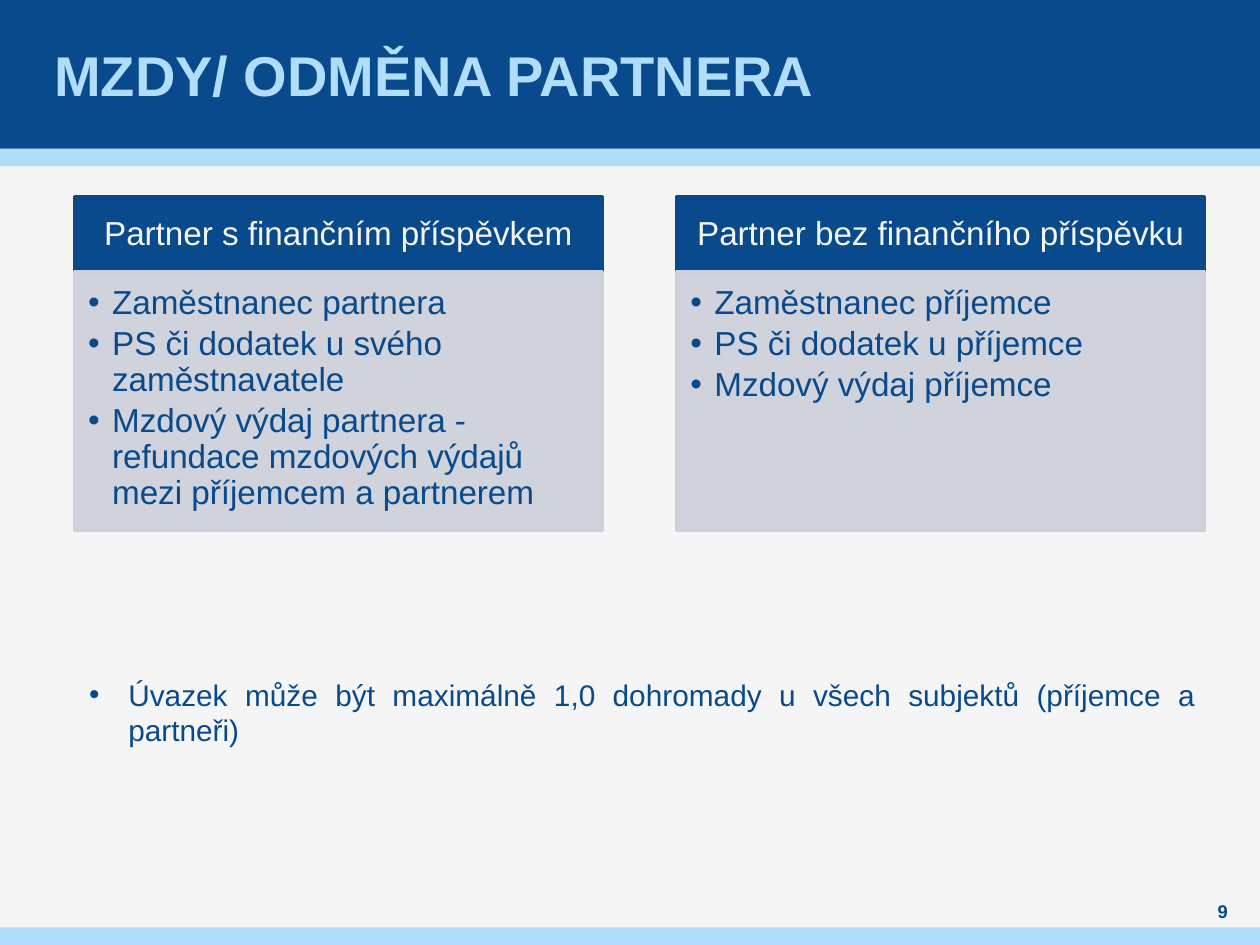
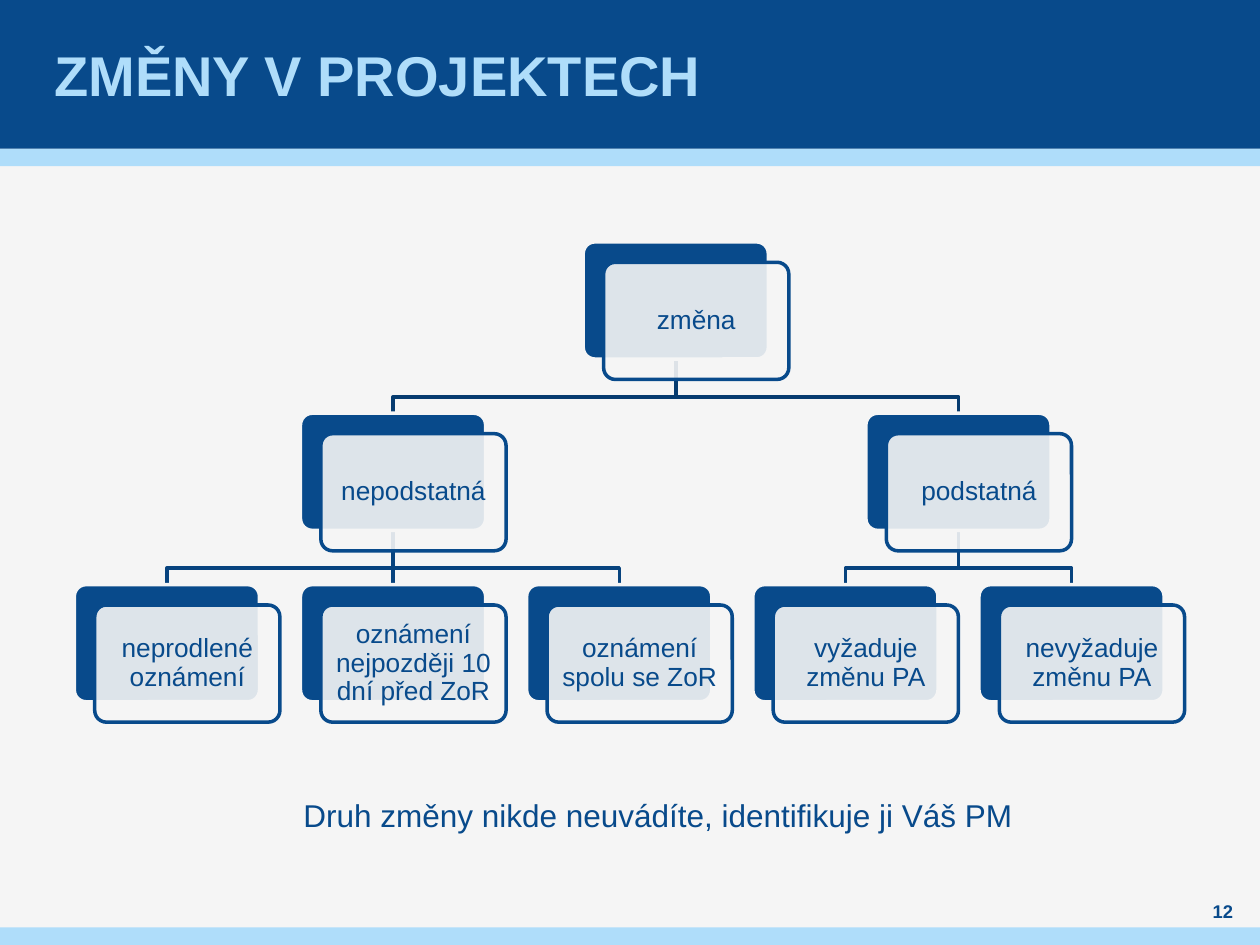
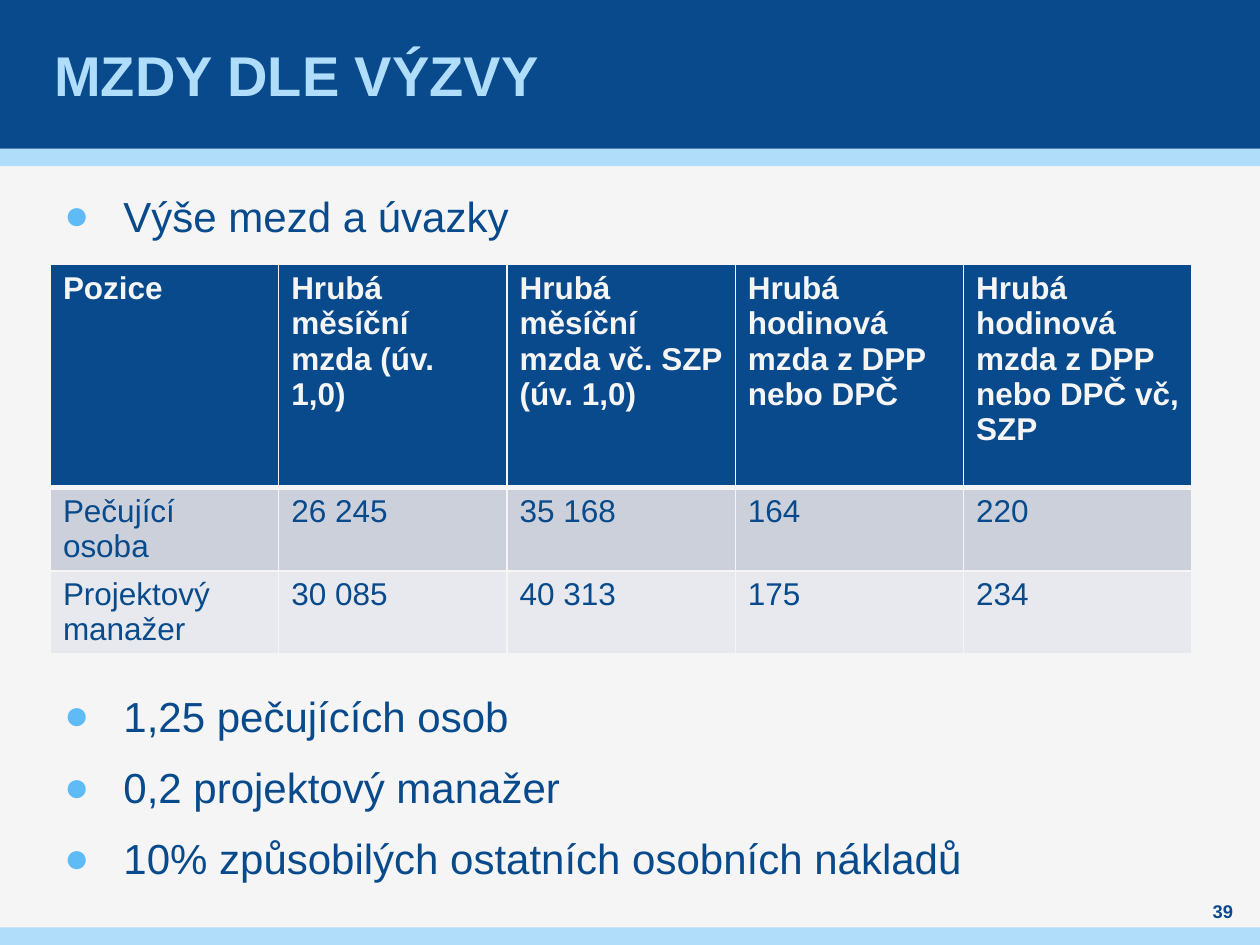
from dataclasses import dataclass
from typing import NamedTuple

from lxml.etree import SubElement
from pptx import Presentation
from pptx.dml.color import RGBColor
from pptx.enum.shapes import MSO_CONNECTOR, MSO_SHAPE
from pptx.enum.text import MSO_ANCHOR, MSO_AUTO_SIZE, PP_ALIGN
from pptx.oxml.ns import qn
from pptx.util import Inches, Pt

COLORS = {
    "navy": "084A8B",
    "sky": "AFDDFA",
    "bullet": "5FBBF5",
    "paper": "F5F5F5",
    "grey": "CCD0DA",
    "light": "E7E9EE",
    "branch": "07437E",
    "trunk": "063B6F",
}
FONT = "Arial"
COLS, ROWS = 100, 75
UNIT = Inches(0.1)


class Box(NamedTuple):
    """Left, top, width and height in grid units."""

    col: float
    row: float
    cols: float
    rows: float

    def emu(self) -> list[int]:
        """Return the box as lengths on the slide."""
        return [round(v * UNIT) for v in self]


@dataclass
class Style:
    """Look of a paragraph."""

    size: float
    color: str = "navy"
    bold: bool = False
    align: PP_ALIGN = PP_ALIGN.LEFT
    spacing: object = None
    before: float = 0
    after: float = 0
    bullet: str = ""
    indent: float = 0
    bullet_color: str = "navy"


@dataclass
class Panel:
    """Heading with a list below it."""

    heading: str
    items: list[str]


@dataclass
class Node:
    """Box of the tree, placed by column and level."""

    text: str
    col: float
    level: int
    parent: int | None = None


BANDS = [
    (Box(0, 11.8, COLS, 1.4), "sky"),
    (Box(0, 0, COLS, 11.8), "navy"),
    (Box(0, 73.6, COLS, 1.4), "sky"),
]
TITLE = Style(32, "sky", True)
NUMBER = Style(10.5, bold=True, align=PP_ALIGN.CENTER)
HEADING = Style(19, "paper", align=PP_ALIGN.CENTER, spacing=0.9)
ITEM = Style(19, spacing=0.9, after=2.85, bullet="•", indent=1.9)
NOTE = Style(17, align=PP_ALIGN.JUSTIFY, bullet="•", indent=3.1)
NODE = Style(15, align=PP_ALIGN.CENTER, spacing=0.9)
BODY = Style(24, spacing=Pt(28.8), before=6, after=6, bullet="●",
             indent=4.7, bullet_color="bullet")
LINE_PITCH = 40.8
TABLE_LINES = 6

PANELS = [
    Panel("Partner s finančním příspěvkem", [
        "Zaměstnanec partnera",
        "PS či dodatek u svého zaměstnavatele",
        "Mzdový výdaj partnera - refundace mzdových výdajů mezi příjemcem a partnerem",
    ]),
    Panel("Partner bez finančního příspěvku", [
        "Zaměstnanec příjemce",
        "PS či dodatek u příjemce",
        "Mzdový výdaj příjemce",
    ]),
]
NODES = [
    Node("změna", 2.25, 0),
    Node("nepodstatná", 1, 1, 0),
    Node("podstatná", 3.5, 1, 0),
    Node("neprodlené oznámení", 0, 2, 1),
    Node("oznámení nejpozději 10 dní před ZoR", 1, 2, 1),
    Node("oznámení spolu se ZoR", 2, 2, 1),
    Node("vyžaduje změnu PA", 3, 2, 2),
    Node("nevyžaduje změnu PA", 4, 2, 2),
]
NODE_LEFT, NODE_TOP = 5.9, 19.2
NODE_STEP, LEVEL_STEP = 17.95, 13.6
NODE_W, NODE_H = 14.7, 9.3
NODE_SHIFT = 1.62
WAGES = [
    ["Pozice", "Hrubá měsíční mzda (úv. 1,0)", "Hrubá měsíční mzda vč. SZP (úv. 1,0)",
     "Hrubá hodinová mzda z DPP nebo DPČ", "Hrubá hodinová mzda z DPP nebo DPČ vč, SZP"],
    ["Pečující osoba", "26 245", "35 168", "164", "220"],
    ["Projektový manažer", "30 085", "40 313", "175", "234"],
]
WAGE_FILLS = ["navy", "grey", "light"]
WAGE_ROWS = [17.7, 6.6, 6.6]


def rgb(name: str) -> RGBColor:
    """Look up a colour."""
    return RGBColor.from_string(COLORS[name])


def write(tf, texts: list[str], style: Style, insets=(1, 0.5, 1, 0.5),
          anchor=MSO_ANCHOR.TOP) -> None:
    """Fill a text frame with equally styled paragraphs."""
    tf.word_wrap = True
    tf.auto_size = MSO_AUTO_SIZE.NONE
    tf.vertical_anchor = anchor
    tf.margin_left, tf.margin_top, tf.margin_right, tf.margin_bottom = (
        round(v * UNIT) for v in insets)
    tf.text = "\n".join(texts)
    for p in tf.paragraphs:
        style_paragraph(p, style)


def style_paragraph(p, style: Style) -> None:
    """Apply a style to a paragraph and its runs."""
    p.alignment = style.align
    p.space_before, p.space_after = Pt(style.before), Pt(style.after)
    if style.spacing:
        p.line_spacing = style.spacing
    if style.bullet:
        pPr = p._p.get_or_add_pPr()
        indent = round(style.indent * UNIT)
        pPr.set("marL", str(indent))
        pPr.set("indent", str(-indent))
        clr = SubElement(pPr, qn("a:buClr"))
        SubElement(clr, qn("a:srgbClr"), val=COLORS[style.bullet_color])
        SubElement(pPr, qn("a:buFont"), typeface=FONT)
        SubElement(pPr, qn("a:buChar"), char=style.bullet)
    for r in p.runs:
        r.font.name, r.font.size, r.font.bold = FONT, Pt(style.size), style.bold
        r.font.color.rgb = rgb(style.color)


def add_box(s, box: Box, fill: str, line: str | None = None,
            kind=MSO_SHAPE.RECTANGLE, alpha: int = 100):
    """Draw a filled preset shape."""
    sp = s.shapes.add_shape(kind, *box.emu())
    sp.shadow.inherit = False
    sp.fill.solid()
    sp.fill.fore_color.rgb = rgb(fill)
    if alpha < 100:
        clr = sp.element.spPr.find(qn("a:solidFill")).find(qn("a:srgbClr"))
        SubElement(clr, qn("a:alpha"), val=str(alpha * 1000))
    if line:
        sp.line.color.rgb = rgb(line)
        sp.line.width = Pt(2)
    else:
        sp.line.fill.background()
    if kind == MSO_SHAPE.ROUNDED_RECTANGLE:
        sp.adjustments[0] = 0.1
    return sp


def add_text(s, box: Box, text: str, style: Style, **frame) -> None:
    """Add a text box."""
    write(s.shapes.add_textbox(*box.emu()).text_frame, [text], style, **frame)


def place(sp, box: Box) -> None:
    """Move a placeholder to a box."""
    sp.left, sp.top, sp.width, sp.height = box.emu()


def setup_master(prs, s) -> None:
    """Give the master its background and bands."""
    master = prs.slide_master
    master.background.fill.solid()
    master.background.fill.fore_color.rgb = rgb("paper")
    for i, (box, fill) in enumerate(BANDS):
        el = add_box(s, box, fill).element
        el.nvSpPr.cNvPr.set("id", str(100 + i))
        master.shapes.element.insert(2 + i, el)


def add_slide(prs, layout: int, title: str, number: int):
    """Start a slide with its title and number."""
    s = prs.slides.add_slide(prs.slide_layouts[layout])
    place(s.shapes.title, Box(3.9, 0, 92.1, 11.8))
    write(s.shapes.title.text_frame, [title], TITLE, (0.4, 0, 0.4, 0), MSO_ANCHOR.MIDDLE)
    add_text(s, Box(94.5, 71.3, 5.1, 2), str(number), NUMBER,
             insets=(0, 0, 0, 0), anchor=MSO_ANCHOR.MIDDLE)
    return s


def add_panel(s, panel: Panel, col: float) -> None:
    """Draw a heading and its list."""
    head = add_box(s, Box(col, 15.6, 41.9, 6), "navy", "navy")
    write(head.text_frame, [panel.heading], HEADING, (1.5, 0.8, 1.5, 0.8), MSO_ANCHOR.MIDDLE)
    body = add_box(s, Box(col, 21.6, 41.9, 20.5), "grey", "grey", alpha=90)
    write(body.text_frame, panel.items, ITEM, (1.1, 1.1, 1.5, 1.7))


def node_box(node: Node) -> Box:
    """Find the back box of a node."""
    return Box(NODE_LEFT + node.col * NODE_STEP, NODE_TOP + node.level * LEVEL_STEP,
               NODE_W, NODE_H)


def add_branch(s, parent: Node, child: Node) -> None:
    """Draw the line from a parent to its child."""
    a, b = node_box(parent), node_box(child)
    x1, x2 = (round((v.col + NODE_W / 2) * UNIT) for v in (a, b))
    y1, turn, y2 = (round(v * UNIT) for v in (a.row + NODE_H, b.row - 1.3, b.row))
    if x1 == x2:
        sp = s.shapes.add_connector(MSO_CONNECTOR.STRAIGHT, x1, y1, x2, y2)
        SubElement(sp.element.spPr, qn("a:effectLst"))
    else:
        path = s.shapes.build_freeform(x1, y1)
        path.add_line_segments([(x1, turn), (x2, turn), (x2, y2)], close=False)
        sp = path.convert_to_shape()
        sp.shadow.inherit = False
        sp.fill.background()
    sp.line.color.rgb = rgb("branch" if parent.level else "trunk")
    sp.line.width = Pt(2)


def add_node(s, node: Node) -> None:
    """Draw a node as two shifted boxes."""
    back = node_box(node)
    front = back._replace(col=back.col + NODE_SHIFT, row=back.row + NODE_SHIFT)
    add_box(s, back, "navy", "paper", MSO_SHAPE.ROUNDED_RECTANGLE)
    sp = add_box(s, front, "paper", "navy", MSO_SHAPE.ROUNDED_RECTANGLE, 90)
    write(sp.text_frame, [node.text], NODE, (0.6,) * 4, MSO_ANCHOR.MIDDLE)


def add_borders(cell, bottom: int) -> None:
    """Draw the borders of a table cell."""
    tcPr = cell._tc.get_or_add_tcPr()
    for side, width in zip("LRTB", (1, 1, 1, bottom)):
        ln = SubElement(tcPr, qn(f"a:ln{side}"), w=str(Pt(width)))
        SubElement(SubElement(ln, qn("a:solidFill")), qn("a:srgbClr"), val=COLORS["paper"])


def add_wages(s, box: Box) -> None:
    """Draw the wage table."""
    table = s.shapes.add_table(len(WAGES), len(WAGES[0]), *box.emu()).table
    for i, texts in enumerate(WAGES):
        head = i == 0
        table.rows[i].height = round(WAGE_ROWS[i] * UNIT)
        style = Style(18, "paper" if head else "navy", head)
        for j, text in enumerate(texts):
            cell = table.cell(i, j)
            add_borders(cell, 3 if head else 1)
            cell.fill.solid()
            cell.fill.fore_color.rgb = rgb(WAGE_FILLS[i])
            cell.text_frame.text = text
            style_paragraph(cell.text_frame.paragraphs[0], style)


def partner_slide(prs) -> None:
    """Build the slide on partner wages."""
    s = add_slide(prs, 5, "MZDY/ ODMĚNA PARTNERA", 9)
    setup_master(prs, s)
    for i, panel in enumerate(PANELS):
        add_panel(s, panel, 5.9 + i * 47.8)
    add_text(s, Box(6.1, 53.2, 89.8, 6.7),
             "Úvazek může být maximálně 1,0 dohromady u všech subjektů (příjemce a partneři)", NOTE)


def changes_slide(prs) -> None:
    """Build the slide on project changes."""
    s = add_slide(prs, 5, "ZMĚNY V PROJEKTECH", 12)
    for node in NODES:
        if node.parent is not None:
            add_branch(s, NODES[node.parent], node)
    for node in NODES:
        add_node(s, node)
    add_text(s, Box(23.1, 62.7, 64.7, 4),
             "Druh změny nikde neuvádíte, identifikuje ji Váš PM", Style(18))


def wages_slide(prs) -> None:
    """Build the slide on wages of the call."""
    s = add_slide(prs, 1, "MZDY DLE VÝZVY", 39)
    body = s.placeholders[1]
    place(body, Box(5.1, 15.1, 88.2, 47.2))
    write(body.text_frame, [
        "Výše mezd a úvazky",
        "1,25 pečujících osob",
        "0,2 projektový manažer",
        "10% způsobilých ostatních osobních nákladů",
    ], BODY, (0, 0, 0, 0))
    body.text_frame.paragraphs[1].space_before = Pt(BODY.before + TABLE_LINES * LINE_PITCH)
    add_wages(s, Box(4, 21, 90.6, sum(WAGE_ROWS)))


def main() -> None:
    """Build and save the slides."""
    prs = Presentation()
    prs.slide_width, prs.slide_height = COLS * UNIT, ROWS * UNIT
    partner_slide(prs)
    changes_slide(prs)
    wages_slide(prs)
    prs.save("out.pptx")


if __name__ == "__main__":
    main()
